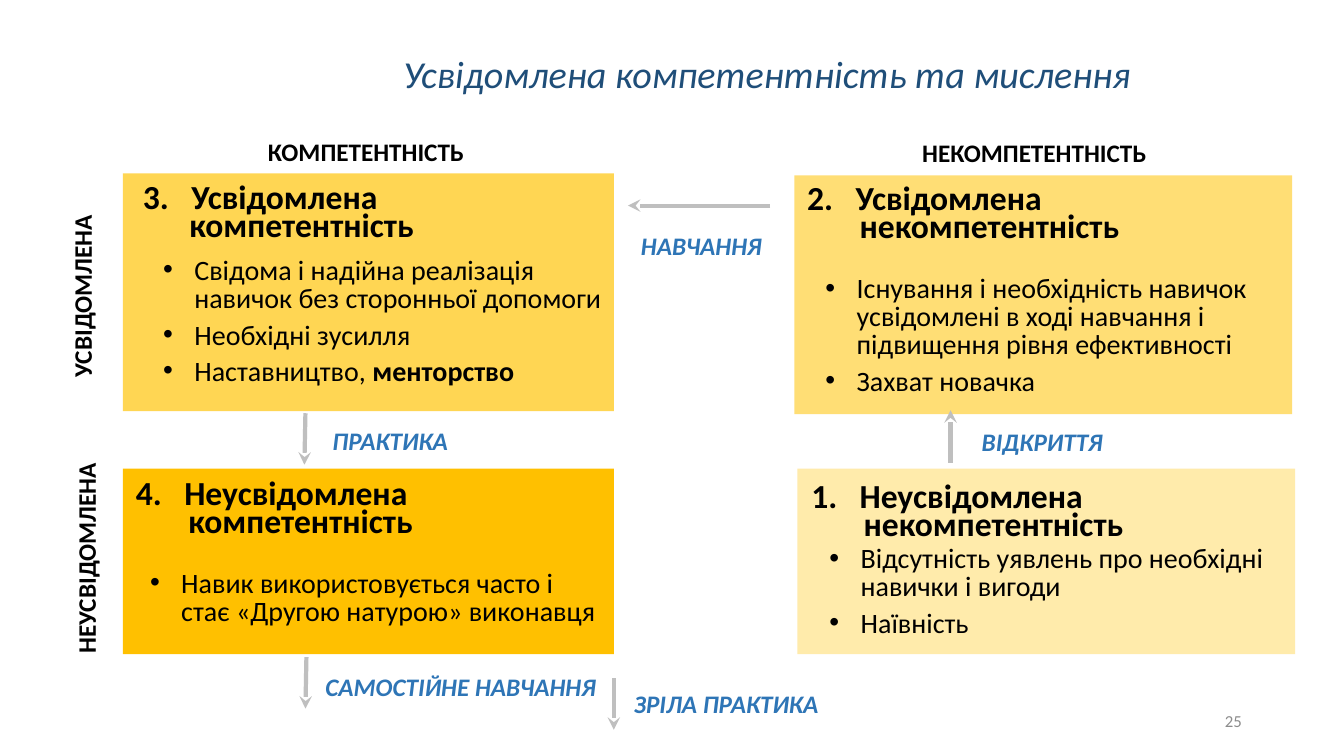
from dataclasses import dataclass

from lxml import etree
from pptx import Presentation
from pptx.dml.color import RGBColor
from pptx.enum.shapes import MSO_CONNECTOR, MSO_SHAPE
from pptx.enum.text import MSO_ANCHOR, MSO_AUTO_SIZE, PP_ALIGN
from pptx.oxml.ns import qn
from pptx.util import Inches, Pt

RECTANGLE = MSO_SHAPE.RECTANGLE
STRAIGHT = MSO_CONNECTOR.STRAIGHT
TOP, MIDDLE = MSO_ANCHOR.TOP, MSO_ANCHOR.MIDDLE
LEFT, RIGHT = PP_ALIGN.LEFT, PP_ALIGN.RIGHT
GROW, FIXED = MSO_AUTO_SIZE.SHAPE_TO_FIT_TEXT, MSO_AUTO_SIZE.NONE


@dataclass(frozen=True)
class Theme:
    font: str = "Calibri"
    text: str = "000000"
    title: str = "1F4E79"
    step: str = "2E75B6"
    arrow: str = "BFBFBF"
    page: str = "8C8C8C"
    title_size: float = 27.2
    heading_size: float = 24
    body_size: float = 20
    label_size: float = 18
    page_size: float = 12
    tight_line: float = 20


THEME = Theme()

# Grid: ten columns or rows to the inch
COLUMNS, ROWS = 133.33, 75
LABEL_HEIGHT = 4.1
BODY_WIDTH, BODY_HEIGHT = 47, 10.2
HEADING_WIDTH, HEADING_HEIGHT = 47.7, 6.8

# Frame, fill, number, heading words, heading offset, second-line indent,
# bullets, bullet offset
QUADRANTS = [
    ((12.2, 17.2, 48.7, 23.6), "FFD653", 3, ("Усвідомлена", "компетентність"),
     (1, 1), 4.6,
     ["Свідома і надійна реалізація навичок без сторонньої допомоги",
      "Необхідні зусилля",
      [("Наставництво, ", False), ("менторство", True)]], (3, 9.7)),
    ((78.8, 17.4, 49.4, 23.7), "FFDE75", 2, ("Усвідомлена", "некомпетентність"),
     (0.3, 0.9), 5.2,
     ["Існування і необхідність навичок усвідомлені в ході навчання "
      "і підвищення рівня ефективності",
      "Захват новачка"], (2.1, 10.9)),
    ((12.2, 46.5, 48.7, 18.4), "FFC000", 4, ("Неусвідомлена", "компетентність"),
     (0.3, 1), 5.2,
     ["Навик використовується часто і стає «Другою натурою» виконавця"],
     (1.7, 7.8)),
    ((79.1, 46.5, 49.4, 18.4), "FFEBAB", 1, ("Неусвідомлена", "некомпетентність"),
     (0.4, 1.3), 5.2,
     ["Відсутність уявлень про необхідні навички і вигоди",
      "Наївність"], (2.2, 7.2)),
]

# Words, left, top, width, rotation
AXIS_LABELS = [
    ("КОМПЕТЕНТНІСТЬ", 25.6, 12.8, 21.7, 0),
    ("НЕКОМПЕТЕНТНІСТЬ", 90.5, 12.9, 24.5, 0),
    ("УСВІДОМЛЕНА", -1.2, 27.2, 18.3, 270),
    ("НЕУСВІДОМЛЕНА", -2.2, 53.2, 21.1, 270),
]

# Words, left, top, width, arrow start, arrow end
STEPS = [
    ("ВІДКРИТТЯ", 96.4, 41.6, 14.1, (94.3, 45.9), (94.3, 40.7)),
    ("НАВЧАННЯ", 62.6, 22.1, 14.1, (76.4, 20.4), (62.3, 20.4)),
    ("ПРАКТИКА", 32, 41.5, 13.6, (30.3, 41), (30.2, 46.1)),
    ("САМОСТІЙНЕ НАВЧАННЯ", 31.3, 65.9, 29.1, (30.4, 65.2), (30.3, 70.3)),
    ("ЗРІЛА ПРАКТИКА", 61.9, 67.6, 21.1, (60.9, 67.3), (60.9, 72.4)),
]


def cells(count):
    return Inches(count / 10)


def frame_of(box):
    return [cells(side) for side in box]


def add_text(slide, box, paragraphs, *, size, color=THEME.text, bold=False,
             italic=False, align=LEFT, anchor=TOP, wrap=True, fit=FIXED,
             line=1.0, after=0, indents=((0, 0),), bullet=None, rotation=0):
    """Place paragraphs; each is a string or a list of (words, bold) runs."""
    holder = slide.shapes.add_textbox(*frame_of(box))
    holder.rotation = rotation
    frame = holder.text_frame
    frame.word_wrap, frame.auto_size = wrap, fit
    frame.vertical_anchor = anchor
    for index, content in enumerate(paragraphs):
        paragraph = frame.paragraphs[0] if index == 0 else frame.add_paragraph()
        paragraph.alignment = align
        paragraph.line_spacing = line
        paragraph.space_before = Pt(0)
        paragraph.space_after = Pt(after)
        margin, hanging = indents[min(index, len(indents) - 1)]
        properties = paragraph._p.get_or_add_pPr()
        properties.set("marL", str(cells(margin)))
        properties.set("indent", str(-cells(hanging)))
        if bullet:
            etree.SubElement(properties, qn("a:buFont"), typeface="Arial")
            etree.SubElement(properties, qn("a:buChar"), char=bullet)
        runs = [(content, bold)] if isinstance(content, str) else content
        for words, is_bold in runs:
            run = paragraph.add_run()
            run.text = words
            font = run.font
            font.name, font.size = THEME.font, Pt(size)
            font.bold, font.italic = is_bold, italic
            font.color.rgb = RGBColor.from_string(color)


def add_label(slide, words, left, top, width, **style):
    add_text(slide, (left, top, width, LABEL_HEIGHT), [words],
             size=THEME.label_size, bold=True, wrap=False, fit=GROW,
             line=1.07, **style)


def add_arrow(slide, start, end):
    arrow = slide.shapes.add_connector(STRAIGHT, *frame_of(start + end))
    arrow.line.color.rgb = RGBColor.from_string(THEME.arrow)
    arrow.line.width = Pt(3)
    etree.SubElement(arrow.line._get_or_add_ln(), qn("a:tailEnd"), type="stealth")
    etree.SubElement(arrow._element.spPr, qn("a:effectLst"))


def add_quadrant(slide, box, fill, number, words, heading_offset,
                 second_indent, bullets, bullet_offset):
    panel = slide.shapes.add_shape(RECTANGLE, *frame_of(box))
    panel.shadow.inherit = False
    panel.fill.solid()
    panel.fill.fore_color.rgb = RGBColor.from_string(fill)
    panel.line.fill.background()

    left, top = box[:2]
    tight = Pt(THEME.tight_line)
    add_text(slide,
             (left + heading_offset[0], top + heading_offset[1],
              HEADING_WIDTH, HEADING_HEIGHT),
             [f"{number}.\t{words[0]}", words[1]],
             size=THEME.heading_size, bold=True, line=tight, fit=GROW,
             indents=((4.8, 4.8), (second_indent, 0)))
    add_text(slide,
             (left + bullet_offset[0], top + bullet_offset[1],
              BODY_WIDTH, BODY_HEIGHT),
             bullets, size=THEME.body_size, line=tight, after=6,
             anchor=MIDDLE, indents=((3.1, 3.1),), bullet="•")


def main():
    deck = Presentation()
    deck.slide_width, deck.slide_height = cells(COLUMNS), cells(ROWS)
    slide = deck.slides.add_slide(deck.slide_layouts[6])

    # Title
    add_text(slide, (39, 5.4, 78.1, 7.1),
             ["Усвідомлена компетентність та мислення"],
             size=THEME.title_size, color=THEME.title, italic=True, line=0.8)

    # Four stages of competence
    for quadrant in QUADRANTS:
        add_quadrant(slide, *quadrant)

    # Axis labels
    for words, left, top, width, rotation in AXIS_LABELS:
        add_label(slide, words, left, top, width, rotation=rotation)

    # Steps between the stages
    for words, left, top, width, start, end in STEPS:
        add_arrow(slide, start, end)
        add_label(slide, words, left, top, width, color=THEME.step, italic=True)

    # Page number
    add_text(slide, (94.2, 69.5, 30, 4), ["25"], size=THEME.page_size,
             color=THEME.page, align=RIGHT, anchor=MIDDLE)

    deck.save("out.pptx")


if __name__ == "__main__":
    main()
